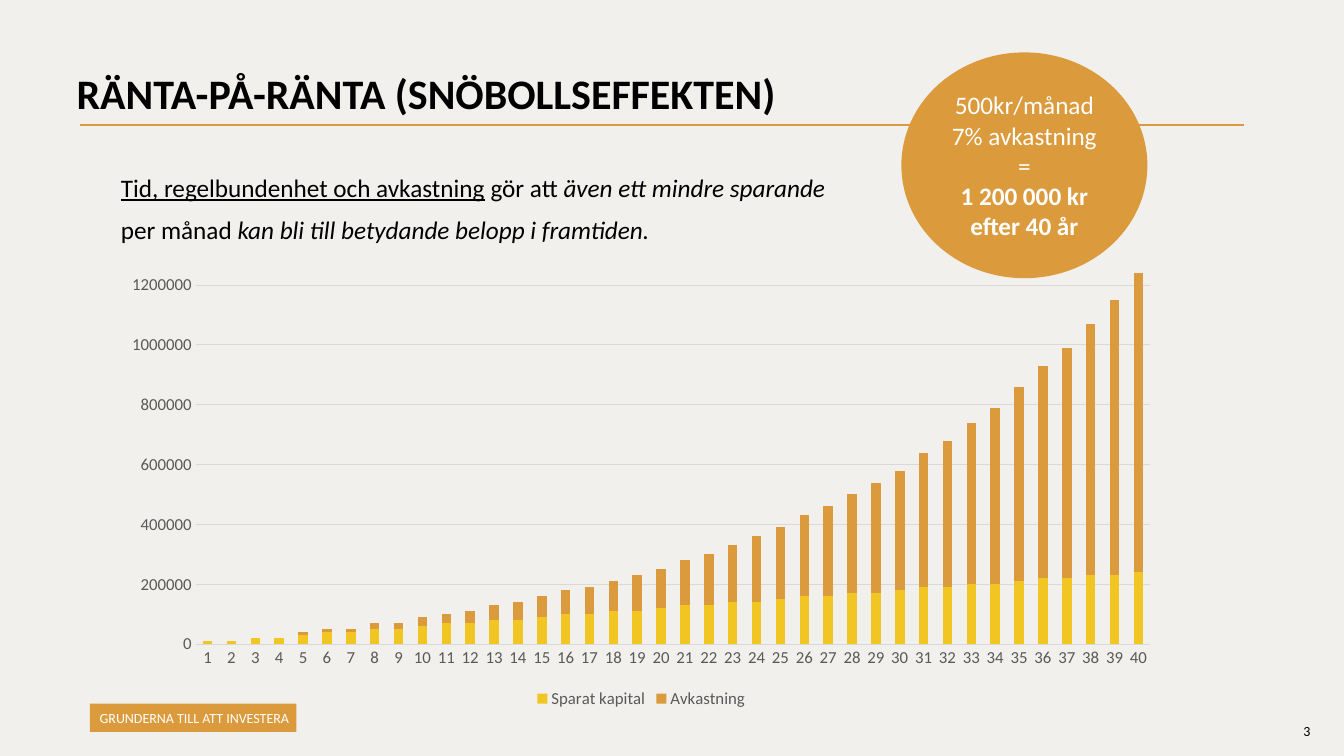
from dataclasses import dataclass
from typing import Optional

from lxml.etree import SubElement
from pptx import Presentation
from pptx.chart.data import CategoryChartData
from pptx.dml.color import RGBColor
from pptx.enum.chart import XL_CHART_TYPE as ChartType, XL_LEGEND_POSITION as LegendPosition
from pptx.enum.chart import XL_TICK_MARK as TickMark
from pptx.enum.shapes import MSO_CONNECTOR as Connector, MSO_SHAPE as ShapeKind
from pptx.enum.text import MSO_ANCHOR as Anchor, PP_ALIGN as Align
from pptx.oxml.ns import qn
from pptx.util import Inches, Pt

COLORS = {
    "background": "F1F0EC", "rule": "DB9B3D", "returns": "DB9A3C", "saved": "F1C522",
    "text": "000000", "light": "FFFFFF", "axis": "595959", "grid": "D9D9D9",
}
FONT = "Calibri"
YEARS = range(1, 41)
SAVED = [round(6000 * year, -4) for year in YEARS]
RETURNS_IN_TEN_THOUSANDS = [
    0, 0, 0, 0, 1, 1, 1, 2, 2, 3, 3, 4, 5, 6, 7, 8, 9, 10, 12, 13,
    15, 17, 19, 22, 24, 27, 30, 33, 37, 40, 45, 49, 54, 59, 65, 71, 77, 84, 92, 100,
]


@dataclass
class Run:
    text: str
    bold: bool = False
    italic: bool = False
    underline: bool = False


@dataclass
class TextBlock:
    box: tuple[float, float, float, float]
    paragraphs: list[list[Run]]
    size: float
    color: str = "text"
    kind: Optional[ShapeKind] = None
    fill: str = "rule"
    align: Align = Align.LEFT
    anchor: Anchor = Anchor.TOP
    insets: tuple[float, float, float, float] = (0.1, 0.05, 0.1, 0.05)
    spacing: float | Pt = 1.0
    wrap: bool = True


TITLE = TextBlock((0.66, 0.68, 12.21, 1.45),
                  [[Run("RÄNTA-PÅ-RÄNTA (SNÖBOLLSEFFEKTEN)", bold=True)]], 30, spacing=0.9)
BLOCKS = [
    TextBlock((12.83, 7.12, 0.4, 0.27), [[Run("3")]], 10),
    TextBlock((0.89, 6.98, 2.05, 0.28), [[Run("GRUNDERNA TILL ATT INVESTERA")]], 10, "light",
              ShapeKind.RECTANGLE, anchor=Anchor.MIDDLE, insets=(0.1, 0.08, 0.04, 0.05),
              spacing=0.9, wrap=False),
    TextBlock((1.1, 1.54, 7.55, 0.9), [[
        Run("Tid, regelbundenhet och avkastning", underline=True),
        Run(" gör att "),
        Run("även ett mindre sparande", italic=True),
        Run(" per månad "),
        Run("kan bli till betydande belopp i framtiden.", italic=True),
    ]], 18, spacing=Pt(30)),
    TextBlock((8.94, 0.52, 2.44, 2.24), [
        [Run("500kr/månad 7% avkastning =")],
        [Run("1 200 000 kr efter 40 år", bold=True)],
    ], 18, "light", ShapeKind.OVAL, "returns", Align.CENTER, Anchor.MIDDLE),
]


def rgb(name: str) -> RGBColor:
    """Return the named colour."""
    return RGBColor.from_string(COLORS[name])


def style_font(font, size: float, color: str) -> None:
    """Set typeface, size and colour."""
    font.name, font.size = FONT, Pt(size)
    font.color.rgb = rgb(color)


def write_text(shape, block: TextBlock) -> None:
    """Fill a shape with the runs of a block."""
    frame = shape.text_frame
    frame.word_wrap, frame.vertical_anchor = block.wrap, block.anchor
    (frame.margin_left, frame.margin_top,
     frame.margin_right, frame.margin_bottom) = map(Inches, block.insets)
    for index, runs in enumerate(block.paragraphs):
        paragraph = frame.add_paragraph() if index else frame.paragraphs[0]
        paragraph.alignment, paragraph.line_spacing = block.align, block.spacing
        for item in runs:
            run = paragraph.add_run()
            run.text = item.text
            style_font(run.font, block.size, block.color)
            run.font.bold, run.font.italic = item.bold, item.italic
            run.font.underline = item.underline


def add_title(slide) -> None:
    """Place and format the title placeholder."""
    title = slide.shapes.title
    title.left, title.top, title.width, title.height = map(Inches, TITLE.box)
    write_text(title, TITLE)


def add_block(slide, block: TextBlock) -> None:
    """Draw a text box or a filled shape with text."""
    box = map(Inches, block.box)
    if block.kind is None:
        shape = slide.shapes.add_textbox(*box)
    else:
        shape = slide.shapes.add_shape(block.kind, *box)
        shape.shadow.inherit = False
        shape.fill.solid()
        shape.fill.fore_color.rgb = rgb(block.fill)
        shape.line.fill.background()
    write_text(shape, block)


def add_rule(slide) -> None:
    """Draw the line under the title."""
    rule = slide.shapes.add_connector(Connector.STRAIGHT, *map(Inches, (0.79, 1.24, 12.34, 1.24)))
    rule.line.color.rgb, rule.line.width = rgb("rule"), Pt(1.5)
    SubElement(rule._element.spPr, qn("a:effectLst"))


def style_line(line) -> None:
    """Give a chart line the grid look."""
    line.color.rgb, line.width = rgb("grid"), Pt(0.75)


def add_growth_chart(slide) -> None:
    """Draw saved capital and returns as stacked columns."""
    data = CategoryChartData()
    data.categories = [str(year) for year in YEARS]
    data.add_series("Sparat kapital", SAVED)
    data.add_series("Avkastning", [value * 10000 for value in RETURNS_IN_TEN_THOUSANDS])
    chart = slide.shapes.add_chart(
        ChartType.COLUMN_STACKED, *map(Inches, (1.1, 2.44, 10.52, 4.63)), data).chart
    style_font(chart.font, 10, "text")
    chart.has_title = False
    chart.has_legend = True
    chart.legend.position = LegendPosition.BOTTOM
    chart.legend.include_in_layout = False
    style_font(chart.legend.font, 12, "axis")

    plot = chart.plots[0]
    plot.gap_width, plot.overlap, plot.vary_by_categories = 150, 100, False
    for series, color in zip(plot.series, ("saved", "returns")):
        series.format.fill.solid()
        series.format.fill.fore_color.rgb = rgb(color)

    years, amounts = chart.category_axis, chart.value_axis
    for axis, number_format in ((years, "#,##0"), (amounts, "0")):
        axis.major_tick_mark = axis.minor_tick_mark = TickMark.NONE
        axis.tick_labels.number_format = number_format
        axis.tick_labels.number_format_is_linked = False
        style_font(axis.tick_labels.font, 12, "axis")
    style_line(years.format.line)
    amounts.format.line.fill.background()
    amounts.minimum_scale, amounts.maximum_scale, amounts.major_unit = 0, 1300000, 200000
    amounts.has_major_gridlines = True
    style_line(amounts.major_gridlines.format.line)


def main() -> None:
    """Build and save the slide."""
    presentation = Presentation()
    presentation.slide_width, presentation.slide_height = Inches(13.33), Inches(7.5)
    slide = presentation.slides.add_slide(presentation.slide_layouts.get_by_name("Title Only"))
    slide.background.fill.solid()
    slide.background.fill.fore_color.rgb = rgb("background")
    add_title(slide)
    add_rule(slide)
    add_growth_chart(slide)
    for block in BLOCKS:
        add_block(slide, block)
    presentation.save("out.pptx")


if __name__ == "__main__":
    main()
